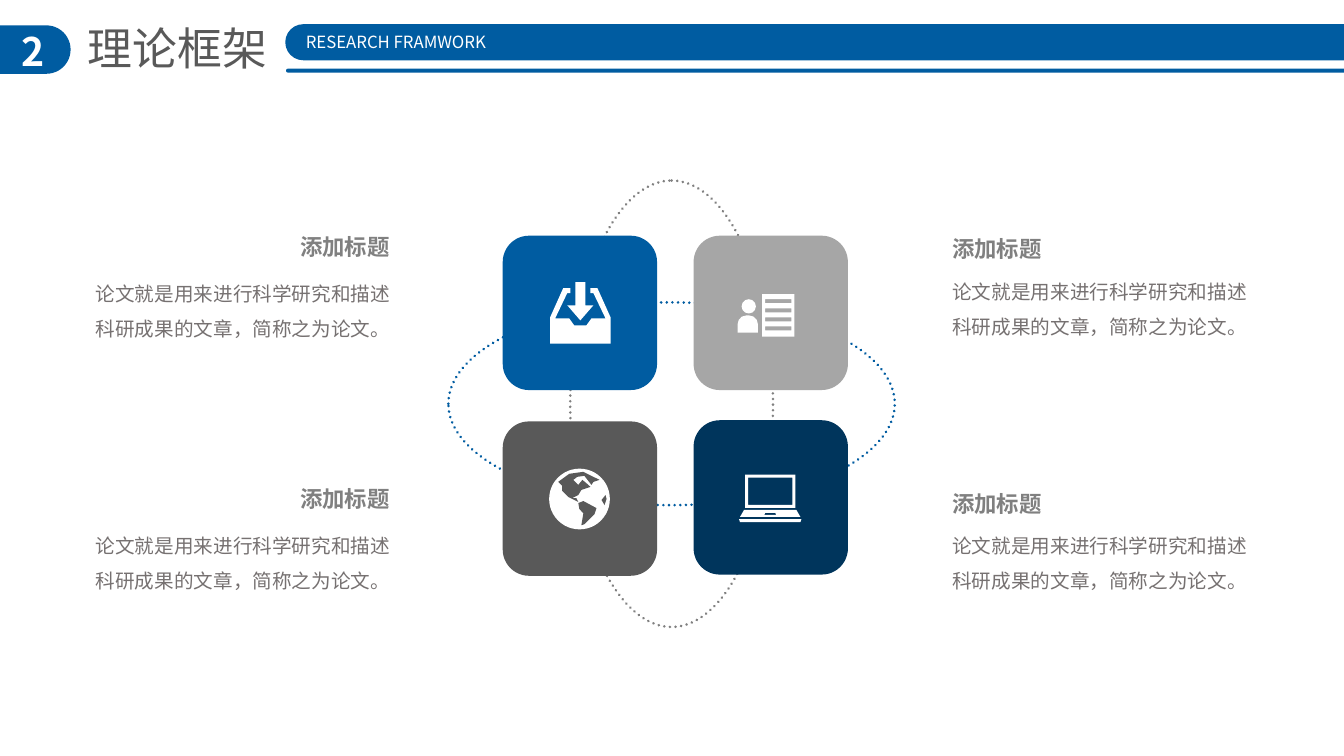
"""Build the research framework slide with four icon tiles and captions."""
from pptx import Presentation
from pptx.dml.color import RGBColor
from pptx.enum.dml import MSO_LINE
from pptx.enum.shapes import MSO_SHAPE
from pptx.enum.text import MSO_ANCHOR, MSO_AUTO_SIZE, PP_ALIGN
from pptx.oxml.ns import qn
from pptx.util import Cm, Pt

FONT = "Noto Sans CJK SC"
COLORS = {
    "blue": "005CA1",
    "navy": "00355C",
    "silver": "A6A6A6",
    "gray": "808080",
    "dark": "595959",
    "body": "767171",
    "white": "FFFFFF",
}
TILE_SIZE = 3.89
TILES = {
    "inbox": (12.67, 5.94, "blue"),
    "card": (17.48, 5.94, "silver"),
    "globe": (12.67, 10.62, "dark"),
    "laptop": (17.48, 10.59, "navy"),
}
ICON_UNIT = Cm(2.54) / 100


def write(sp, text, size, color, bold=False, align=PP_ALIGN.LEFT, wrap=False, spacing=1.0):
    """Put one formatted run into a shape."""
    tf = sp.text_frame
    tf.word_wrap = wrap
    tf.auto_size = MSO_AUTO_SIZE.SHAPE_TO_FIT_TEXT
    tf.vertical_anchor = MSO_ANCHOR.MIDDLE
    tf.margin_left = tf.margin_right = Cm(0.25)
    tf.margin_top = tf.margin_bottom = Cm(0.13)
    p = tf.paragraphs[0]
    p.alignment = align
    p.line_spacing = spacing
    r = p.add_run()
    r.text = text
    r.font.size = Pt(size)
    r.font.bold = bold
    r.font.name = FONT
    r.font.color.rgb = RGBColor.from_string(COLORS[color])
    ea = r.font._element.makeelement(qn("a:ea"), {"typeface": FONT})
    r.font._element.find(qn("a:latin")).addnext(ea)


def mirror(axis, *half):
    """Complete a symmetric outline from its right half, given as offsets from the axis."""
    right = [(axis + dx, y) for dx, y in half]
    left = [(axis - dx, y) for dx, y in reversed(half)]
    return right + left


prs = Presentation()
prs.slide_width, prs.slide_height = Cm(33.87), Cm(19.05)
s = prs.slides.add_slide(prs.slide_layouts[5])

title = s.shapes.title
title.left, title.top, title.width, title.height = Cm(1.96), Cm(0.39), Cm(5.08), Cm(1.63)
write(title, "理论框架", 32, "dark")

for color, rotation in [("blue", 0), ("gray", 90)]:
    orbit = s.shapes.add_shape(MSO_SHAPE.OVAL, Cm(11.3), Cm(7.62), Cm(11.25), Cm(5.11))
    orbit.rotation = rotation
    orbit.shadow.inherit = False
    orbit.fill.background()
    orbit.line.color.rgb = RGBColor.from_string(COLORS[color])
    orbit.line.width = Pt(2)
    orbit.line.dash_style = MSO_LINE.ROUND_DOT
    orbit._element.spPr.find(qn("a:ln")).set("cap", "rnd")

badge = (MSO_SHAPE.ROUNDED_RECTANGLE, -0.71, 0.64, 2.49, 1.22, 0.5, "blue")
banner = (MSO_SHAPE.ROUNDED_RECTANGLE, 7.19, 0.61, 28.02, 0.91, 0.5, "blue")
rule = (MSO_SHAPE.ROUNDED_RECTANGLE, 7.21, 1.73, 28.02, 0.1, 0.5, "blue")
tiles = [
    (MSO_SHAPE.ROUNDED_RECTANGLE, x, y, TILE_SIZE, TILE_SIZE, 0.17, color)
    for x, y, color in TILES.values()
]
head = (MSO_SHAPE.OVAL, 18.69, 7.54, 0.36, 0.36, None, "white")
shoulders = (MSO_SHAPE.ROUND_2_SAME_RECTANGLE, 18.59, 7.95, 0.51, 0.43, 0.5, "white")
sphere = (MSO_SHAPE.OVAL, 13.84, 11.81, 1.53, 1.53, None, "white")

painted = []
for kind, x, y, w, h, rounding, color in [badge, banner, rule, *tiles, head, shoulders, sphere]:
    sp = s.shapes.add_shape(kind, Cm(x), Cm(y), Cm(w), Cm(h))
    if rounding:
        sp.adjustments[0] = rounding
    painted.append((sp, color))

arrow = mirror(77, (5, 46), (5, 69), (13, 69), (0, 84))
tray = mirror(77, (30, 107), (30, 81), (17, 52), (10, 52), (10, 57), (13, 57),
              (25, 82), (11, 82), (6, 89))

page = mirror(84, (16, 58), (16, 100))
slots = [mirror(84, (13, top), (13, top + 4)) for top in range(63, 91, 9)]

north_america = [
    (55, 60), (66, 52), (80, 50), (96, 58), (90, 60), (88, 63), (81, 54), (74, 55),
    (70, 58), (75, 63), (79, 58), (85, 63), (87, 65), (78, 68), (75, 73), (69, 76),
    (73, 76), (75, 80), (65, 75), (59, 69), (59, 64),
]
south_america = [
    (75, 81), (80, 79), (93, 86), (91, 92), (85, 98), (81, 102), (78, 103), (80, 91), (76, 87),
]
africa = [(101, 83), (98, 78), (102, 73), (103, 77)]

lid = mirror(76, (25, 54), (25, 87))
screen = mirror(76, (21.5, 57), (21.5, 84))
keyboard = mirror(76, (26, 89), (30, 96))
trackpad = mirror(76, (5, 92), (6.5, 94))
foot = mirror(76, (31, 98), (30, 101))

icon_parts = [
    ("inbox", "white", [arrow]),
    ("inbox", "white", [tray]),
    ("card", "white", [page, *slots]),
    ("globe", "dark", [north_america, south_america, africa]),
    ("laptop", "white", [lid, screen, keyboard, trackpad, foot]),
]
for tile, color, outlines in icon_parts:
    x, y, _ = TILES[tile]
    builder = s.shapes.build_freeform(*outlines[0][0], scale=ICON_UNIT)
    for outline in outlines:
        if outline is not outlines[0]:
            builder.move_to(*outline[0])
        builder.add_line_segments(outline[1:], close=True)
    painted.append((builder.convert_to_shape(Cm(x), Cm(y)), color))

for sp, color in painted:
    sp.shadow.inherit = False
    sp.fill.solid()
    sp.fill.fore_color.rgb = RGBColor.from_string(COLORS[color])
    sp.line.fill.background()

number = s.shapes.add_textbox(Cm(0.18), Cm(0.56), Cm(1.3), Cm(1.45))
write(number, "2", 28, "white", bold=True, align=PP_ALIGN.CENTER, wrap=True)
subtitle = s.shapes.add_textbox(Cm(7.29), Cm(0.67), Cm(5.38), Cm(0.76))
write(subtitle, "RESEARCH FRAMWORK", 12, "white", align=PP_ALIGN.CENTER)

captions = [
    (7.32, 5.74, 2.16, 6.66),
    (7.32, 12.09, 2.16, 13.01),
    (23.75, 5.79, 23.75, 6.61),
    (23.75, 12.22, 23.75, 13.01),
]
for heading_x, heading_y, body_x, body_y in captions:
    heading = s.shapes.add_textbox(Cm(heading_x), Cm(heading_y), Cm(2.79), Cm(0.94))
    write(heading, "添加标题", 16, "gray", bold=True)
    body = s.shapes.add_textbox(Cm(body_x), Cm(body_y), Cm(7.95), Cm(2.06))
    write(body, "论文就是用来进行科学研究和描述科研成果的文章，简称之为论文。", 14, "body",
          wrap=True, spacing=1.5)

prs.save("out.pptx")
